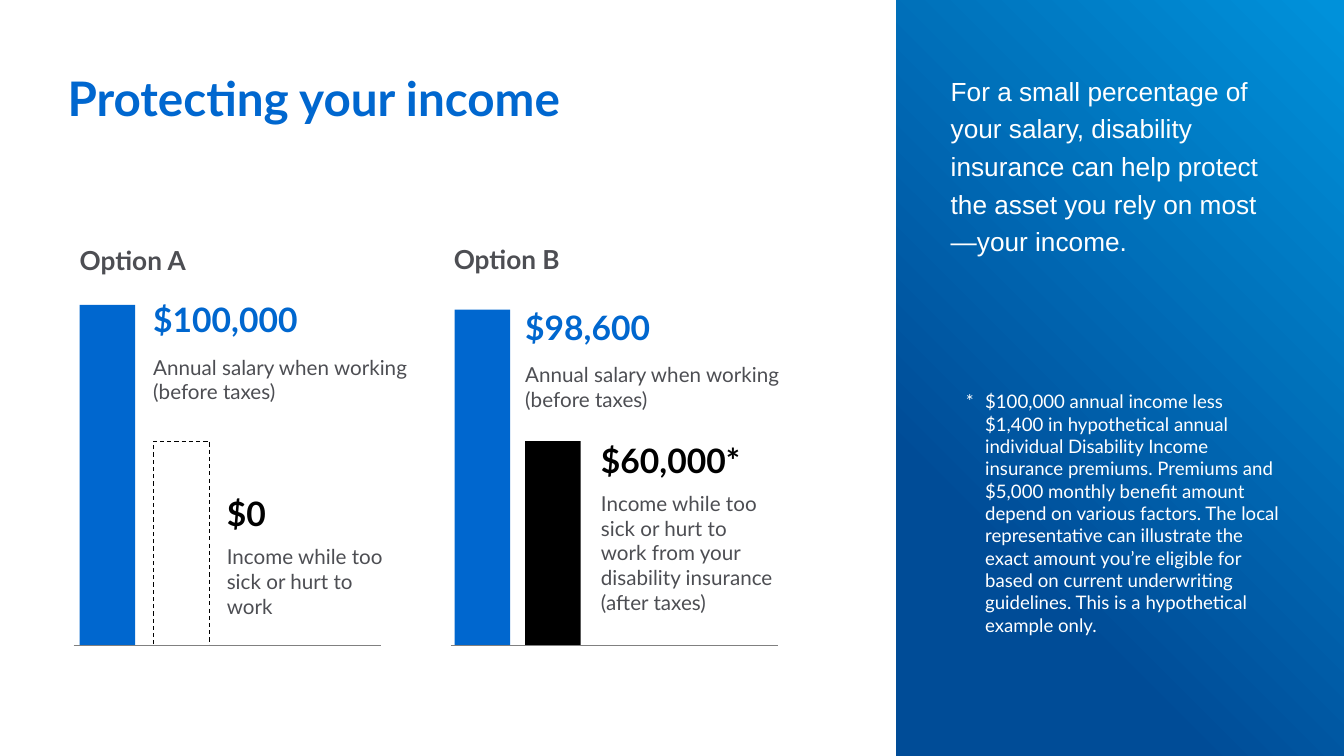
from lxml import etree
from pptx import Presentation, util as u
from pptx.dml.color import RGBColor
from pptx.enum import dml, shapes
from pptx.oxml.ns import qn

BLUE, BLACK, GREY, WHITE = "0067CF", "000000", "4D4E53", "FFFFFF"

presentation = Presentation()
presentation.slide_width = u.Inches(13.33)
presentation.slide_height = u.Inches(7.5)
slide = presentation.slides.add_slide(presentation.slide_layouts[6])


def place(*lengths):
    """Turn alternating horizontal and vertical percentages of the slide into lengths."""
    sides = (presentation.slide_width, presentation.slide_height)
    return [round(length / 100 * sides[i % 2]) for i, length in enumerate(lengths)]


def add_text(area, *lines):
    """Add a text box; each line is (words, size, colour, bold, space after, font)."""
    text_frame = slide.shapes.add_textbox(*place(*area)).text_frame
    text_frame.word_wrap = True
    text_frame.margin_left = text_frame.margin_right = 0
    text_frame.margin_top = text_frame.margin_bottom = 0
    text_frame.text = "\n".join(line[0] for line in lines)
    for paragraph, (words, size, colour, bold, after, font) in zip(text_frame.paragraphs, lines):
        paragraph.space_after = u.Pt(after)
        for run in paragraph.runs:
            run.font.name, run.font.size, run.font.bold = font, u.Pt(size), bold
            run.font.color.rgb = RGBColor.from_string(colour)
    return text_frame.paragraphs[0]


# Gradient side panel on the right third
panel = slide.shapes.add_shape(shapes.MSO_SHAPE.RECTANGLE, *place(66.67, 0, 33.33, 100))
panel.shadow.inherit = False
panel.line.fill.background()
panel.fill.gradient()
panel.fill.gradient_angle = 45
for stop, position, colour in zip(panel.fill.gradient_stops, (0.25, 0.99), ("004C97", "0091DA")):
    stop.position = position
    stop.color.rgb = RGBColor.from_string(colour)

# Title
add_text((5.03, 9.07, 58.14, 13.6), ("Protecting your income", 34, BLUE, True, 0, "Lato"))

# Option headings
for name, left, top in (("Option A", 5.93, 32.27), ("Option B", 33.76, 32.13)):
    add_text((left, top, 12, 4.27), (name, 18.7, GREY, True, 8, "Lato"))

# Income bars: height follows the amount, all standing on one baseline
BASELINE, FULL_HEIGHT, BAR_WIDTH = 85.4, 45.07, 4.13
for left, amount, colour in (
    (5.93, 100000, BLUE),
    (11.45, 60000, None),
    (33.83, 98600, BLUE),
    (39.08, 60000, BLACK),
):
    height = FULL_HEIGHT * amount / 100000
    bar = slide.shapes.add_shape(
        shapes.MSO_SHAPE.RECTANGLE, *place(left, BASELINE - height, BAR_WIDTH, height))
    bar.shadow.inherit = False
    if colour:
        bar.fill.solid()
        bar.fill.fore_color.rgb = RGBColor.from_string(colour)
        bar.line.fill.background()
    else:
        bar.fill.background()
        bar.line.color.rgb = RGBColor.from_string(BLACK)
        bar.line.width = u.Pt(0.75)
        bar.line.dash_style = dml.MSO_LINE.DASH

# Baselines
for start, end in ((5.48, 28.36), (33.53, 57.91)):
    baseline = slide.shapes.add_connector(
        shapes.MSO_CONNECTOR.STRAIGHT, *place(start, BASELINE, end, BASELINE))
    baseline.line.color.rgb = RGBColor.from_string("808080")
    baseline.line.width = u.Pt(1)
    etree.SubElement(baseline.element.spPr, qn("a:effectLst"))

# Amounts with their explanations
for area, amount, colour, gap, explanation in (
    ((11.4, 39.6, 19, 13.6), "$100,000", BLUE, 10.7,
     "Annual salary when working (before taxes)"),
    ((16.88, 65.2, 11.6, 17.73), "$0", BLACK, 8,
     "Income while too sick or hurt to work"),
    ((39.08, 40.53, 19.95, 16.93), "$98,600", BLUE, 10.7,
     "Annual salary when working\v(before taxes)"),
    ((44.71, 58.13, 13.2, 24.67), "$60,000*", BLACK, 8,
     "Income while too sick or hurt to\vwork from your disability insurance (after taxes)"),
):
    add_text(area, (amount, 24, colour, True, gap, "Lato"),
             (explanation, 14.7, GREY, False, 0, "Lato"))

# Side panel message
message = add_text(
    (70.74, 9.07, 23.33, 35.73),
    ("For a small percentage of your salary, disability insurance can help protect "
     "the asset you rely on most—your income.", 18.7, WHITE, False, 0, "Arial"))
message.line_spacing = 1.2

# Footnote with a hanging asterisk
footnote = add_text(
    (71.87, 51.6, 23.63, 36.8),
    ("$100,000 annual income less $1,400 in hypothetical annual individual Disability "
     "Income insurance premiums. Premiums and $5,000 monthly benefit amount depend on "
     "various factors. The local representative can illustrate the exact amount you’re "
     "eligible for based on current underwriting guidelines. This is a hypothetical "
     "example only.", 13.3, WHITE, False, 5.3, "Lato"))
properties = footnote._p.get_or_add_pPr()
properties.set("marL", str(u.Inches(0.19)))
properties.set("indent", str(-u.Inches(0.19)))
etree.SubElement(properties, qn("a:buFont"), typeface="Lato")
etree.SubElement(properties, qn("a:buChar"), char="*")

presentation.save("out.pptx")
